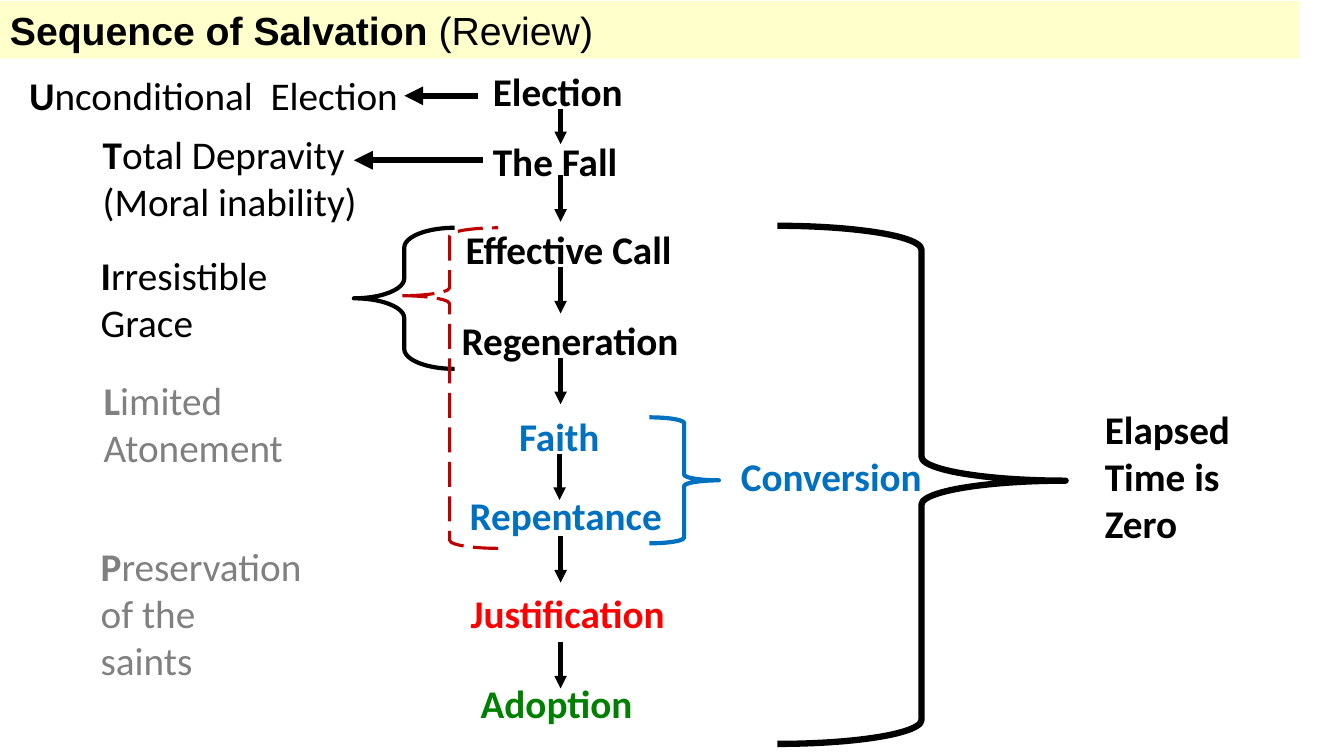
from lxml.etree import SubElement
from pptx import Presentation
from pptx.dml.color import RGBColor
from pptx.enum.dml import MSO_LINE as DASH
from pptx.enum.shapes import MSO_CONNECTOR as CONNECTOR, MSO_SHAPE as SHAPE
from pptx.enum.text import MSO_ANCHOR as ANCHOR, MSO_AUTO_SIZE as AUTO_SIZE, PP_ALIGN as ALIGN
from pptx.oxml.ns import qn
from pptx.util import Emu, Pt

PX = 9144
BLACK, BLUE, GRAY = "000000", "0070C0", "808080"
RED, GREEN, DARK_RED, CREAM = "FF0000", "008000", "C00000", "FFFFCC"


def px(*lengths):
    return [Emu(length * PX) for length in lengths]


def color(hex_code):
    return RGBColor.from_string(hex_code)


def write(frame, text, lead="", font="Calibri", ink=BLACK, bold=False):
    frame.word_wrap = True
    frame.auto_size = AUTO_SIZE.SHAPE_TO_FIT_TEXT
    frame.vertical_anchor = ANCHOR.TOP
    for index, line in enumerate(text.split("\n")):
        paragraph = frame.add_paragraph() if index else frame.paragraphs[0]
        paragraph.alignment = ALIGN.LEFT
        pieces = [(line, bold)]
        if lead and index == 0:
            pieces.insert(0, (lead, True))
        for words, heavy in pieces:
            run = paragraph.add_run()
            run.text = words
            run.font.name = font
            run.font.size = Pt(28)
            run.font.bold = heavy
            run.font.color.rgb = color(ink)


def add_label(slide, box, text, **style):
    write(slide.shapes.add_textbox(*px(*box)).text_frame, text, **style)


def add_title(slide):
    banner = slide.shapes.add_shape(SHAPE.RECTANGLE, *px(0, 1, 1289, 57))
    banner.shadow.inherit = False
    banner.fill.solid()
    banner.fill.fore_color.rgb = color(CREAM)
    banner.line.fill.background()
    write(banner.text_frame, "(Review)", lead="Sequence of Salvation ", font="Arial")


def add_brace(slide, kind, box, ink=BLACK, width=3, curve=0.083, tip=0.5, dash=None):
    brace = slide.shapes.add_shape(kind, *px(*box))
    brace.shadow.inherit = False
    brace.fill.background()
    brace.line.color.rgb = color(ink)
    brace.line.width = Pt(width)
    if dash:
        brace.line.dash_style = dash
    brace.adjustments[0] = curve
    brace.adjustments[1] = tip


def add_arrow(slide, start, end, width=3):
    arrow = slide.shapes.add_connector(CONNECTOR.STRAIGHT, *px(*start, *end))
    arrow.line.color.rgb = color(BLACK)
    arrow.line.width = Pt(width)
    SubElement(arrow.line._get_or_add_ln(), qn("a:tailEnd"), type="triangle")
    SubElement(arrow._element.spPr, qn("a:effectLst"))


def main():
    deck = Presentation()
    deck.slide_width, deck.slide_height = px(1333, 750)
    slide = deck.slides.add_slide(deck.slide_layouts[6])

    add_title(slide)
    add_brace(slide, SHAPE.LEFT_BRACE, (351, 226, 100, 140), curve=0.197)
    add_brace(slide, SHAPE.RIGHT_BRACE, (644, 414, 69, 125), ink=BLUE)
    add_brace(slide, SHAPE.RIGHT_BRACE, (771, 224, 286, 514), width=4.5, tip=0.492)

    steps = [
        ("Election", 479, 62, BLACK),
        ("The Fall", 479, 131, BLACK),
        ("Effective Call", 452, 219, BLACK),
        ("Regeneration", 448, 309, BLACK),
        ("Faith", 505, 404, BLUE),
        ("Repentance", 456, 483, BLUE),
        ("Justification", 457, 580, RED),
        ("Adoption", 467, 669, GREEN),
    ]
    for step, left, top, ink in steps:
        add_label(slide, (left, top, 254, 57), step, ink=ink, bold=True)
    add_label(slide, (725, 444, 215, 57), "Conversion", ink=BLUE, bold=True)
    add_label(slide, (1086, 397, 203, 151), "Elapsed Time is Zero", bold=True)

    step_arrows = [(556, 108, 35), (556, 174, 46), (556, 265, 46), (556, 355, 46),
                   (555, 450, 46), (556, 532, 46), (556, 637, 46)]
    for x, top, length in step_arrows:
        add_arrow(slide, (x, top), (x, top + length))

    doctrines = [
        ("U", "nconditional  Election", (19, 66, 400, 57), BLACK),
        ("T", "otal Depravity\n(Moral inability)", (92, 124, 278, 104), BLACK),
        ("I", "rresistible Grace", (90, 244, 228, 104), BLACK),
        ("L", "imited Atonement", (93, 368, 228, 104), GRAY),
        ("P", "reservation\nof the\nsaints", (90, 533, 228, 151), GRAY),
    ]
    for initial, rest, box, ink in doctrines:
        add_label(slide, box, rest, lead=initial, ink=ink)
    for start, end, y in [(479, 351, 159), (474, 401, 95)]:
        add_arrow(slide, (start, y), (end, y), width=4.5)

    add_brace(slide, SHAPE.LEFT_BRACE, (398, 226, 96, 318), ink=DARK_RED,
              width=2.25, tip=0.212, dash=DASH.LONG_DASH)
    deck.save("out.pptx")


if __name__ == "__main__":
    main()
